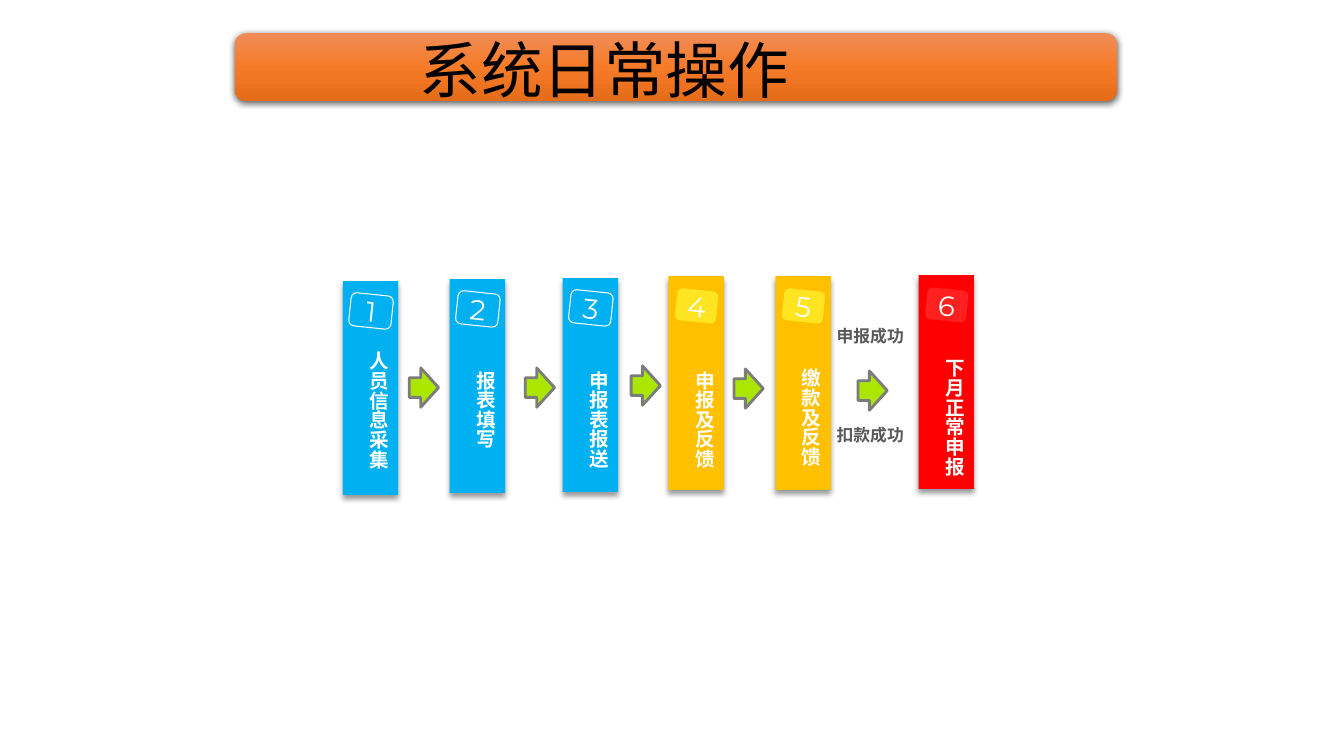
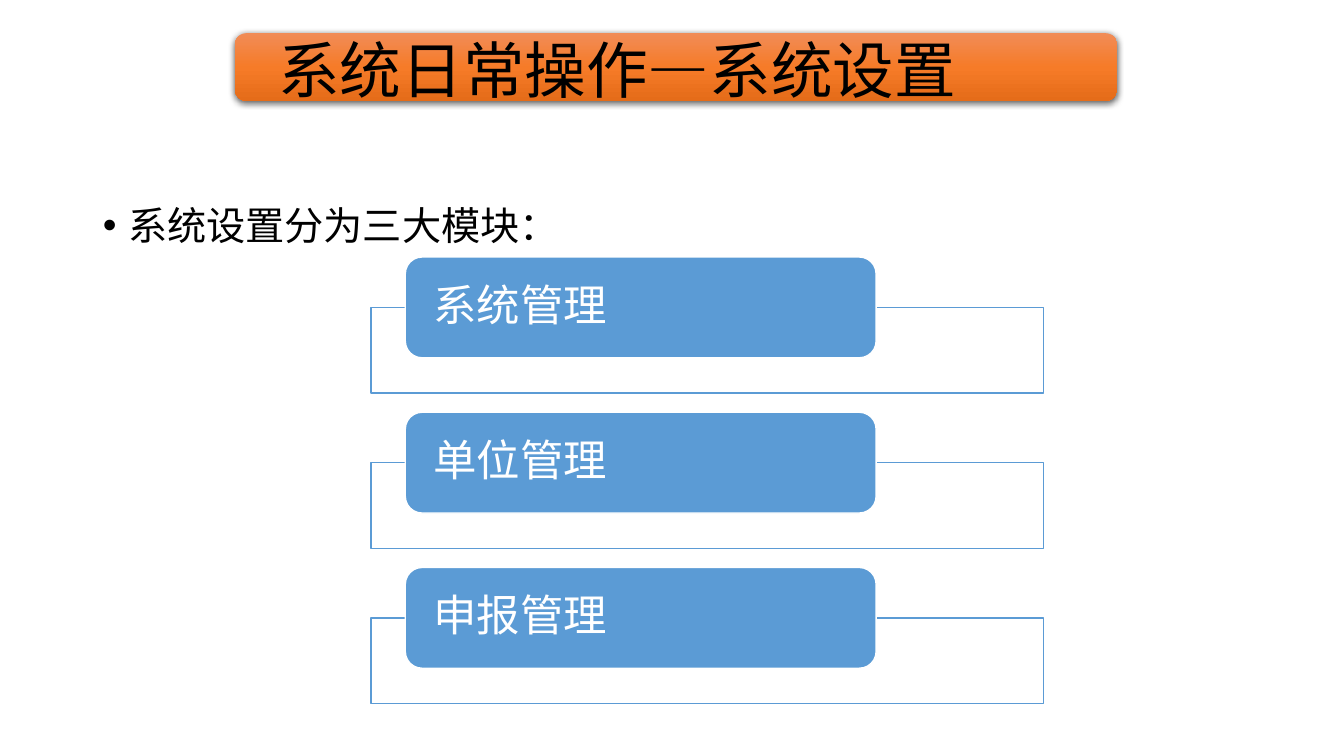
import copy

import pptx
import pptx.dml.color
import pptx.enum.shapes
import pptx.enum.text
import pptx.oxml
import pptx.oxml.ns
import pptx.util

Inches = pptx.util.Inches
Pt = pptx.util.Pt
qn = pptx.oxml.ns.qn
SHAPE = pptx.enum.shapes.MSO_SHAPE
ALIGN = pptx.enum.text.PP_ALIGN
ANCHOR = pptx.enum.text.MSO_ANCHOR
AUTO = pptx.enum.text.MSO_AUTO_SIZE

COLORS = {
    "black": "000000", "white": "FFFFFF", "label": "595959",
    "band_top": "F18C57", "band_mid": "F67B28", "band_end": "E56C19",
    "blue": "00B0F0", "amber": "FFC000", "red": "FF0000",
    "amber_badge": "FFE422", "red_badge": "FF2020",
    "arrow": "AAE600", "arrow_line": "7C7C7C", "card": "5B9BD5",
}
EAST_ASIAN = "Noto Sans CJK SC"
FORMATS = {
    "title": {"name": "Calibri", "size": Pt(44), "bold": False, "color": "black"},
    "body": {"name": "Calibri", "size": Pt(28), "bold": False, "color": "black"},
    "card": {"name": "Calibri", "size": Pt(31), "bold": False, "color": "white"},
    "badge": {"name": "Montserrat", "size": Pt(20), "bold": False, "color": "white"},
    "step": {"name": EAST_ASIAN, "size": Pt(14), "bold": True, "color": "white"},
    "result": {"name": EAST_ASIAN, "size": Pt(12), "bold": True, "color": "label"},
}

# left, top, label top, text, fill, badge fill, badge line
STEPS = [
    (3.40, 2.79, 3.39, "人员信息采集", "blue", None, "white"),
    (4.46, 2.77, 3.58, "报表填写", "blue", None, "white"),
    (5.58, 2.76, 3.58, "申报表报送", "blue", None, "white"),
    (6.63, 2.74, 3.58, "申报及反馈", "amber", "amber_badge", "amber"),
    (7.69, 2.74, 3.56, "缴款及反馈", "amber", "amber_badge", "amber"),
    (9.11, 2.73, 3.46, "下月正常申报", "red", "red_badge", "red"),
]
ARROWS = [(4.06, 3.65), (5.21, 3.65), (6.26, 3.63), (7.28, 3.66), (8.51, 3.68)]
RESULTS = [("申报成功", 3.18), ("扣款成功", 4.16)]
MODULES = ["系统管理", "单位管理", "申报管理"]


def rgb(color):
    return pptx.dml.color.RGBColor.from_string(COLORS[color])


def place(item, box):
    for side, length in zip(("left", "top", "width", "height"), box):
        setattr(item, side, Inches(length))


def write(frame, text, style, align=ALIGN.LEFT, spacing=None):
    para = frame.paragraphs[0]
    para.alignment = align
    para.line_spacing = spacing
    span = para.add_run()
    span.text = text
    for key, value in FORMATS[style].items():
        if key == "color":
            span.font.color.rgb = rgb(value)
        else:
            setattr(span.font, key, value)
    latin = span._r.rPr.find(qn("a:latin"))
    east = copy.deepcopy(latin)
    east.tag = qn("a:ea")
    east.set("typeface", EAST_ASIAN)
    latin.addnext(east)
    return para


def add_box(shapes, kind, box, fill=None, line=None, width=1):
    shape = shapes.add_shape(kind, *map(Inches, box))
    shape.shadow.inherit = False
    if fill:
        shape.fill.solid()
        shape.fill.fore_color.rgb = rgb(fill)
    else:
        shape.fill.background()
    if line:
        shape.line.color.rgb = rgb(line)
        shape.line.width = Pt(width)
    else:
        shape.line.fill.background()
    return shape


def add_shadow(shape, alpha, blur, distance):
    effects = shape._element.spPr.find(qn("a:effectLst"))
    effects.append(pptx.oxml.parse_xml(
        f'<a:outerShdw {pptx.oxml.ns.nsdecls("a")} blurRad="{Pt(blur)}" '
        f'dist="{Pt(distance)}" dir="5400000" algn="t" rotWithShape="0">'
        f'<a:srgbClr val="{COLORS["black"]}"><a:alpha val="{alpha * 1000}"/>'
        '</a:srgbClr></a:outerShdw>'))


def add_label(shapes, box, text, style, align=ALIGN.LEFT, vertical=False):
    label = shapes.add_textbox(*map(Inches, box))
    frame = label.text_frame
    frame.word_wrap = False
    frame.auto_size = AUTO.SHAPE_TO_FIT_TEXT
    if vertical:
        frame._txBody.bodyPr.set("vert", "eaVert")
    write(frame, text, style, align)


def add_title(page, text, left):
    """Place the title over the orange band, starting at left."""
    x, y, width, height = 2.33, 0.33, 8.75, 0.67
    band = add_box(page.shapes, SHAPE.ROUNDED_RECTANGLE, (x, y, width, height))
    band.fill.gradient()
    band.fill.gradient_angle = 270
    first = band._element.spPr.find(".//" + qn("a:gs"))
    first.addnext(copy.deepcopy(first))
    stops = zip(band.fill.gradient_stops, ("band_top", "band_mid", "band_end"))
    for index, (stop, color) in enumerate(stops):
        stop.position = index / 2
        stop.color.rgb = rgb(color)
    add_shadow(band, 63, 4.5, 1.5)
    page.shapes._spTree.insert(2, band._element)

    title = page.shapes.title
    place(title, (left, 0, x + width - left, 1.45))
    title.text_frame.vertical_anchor = ANCHOR.MIDDLE
    title.text_frame.auto_size = AUTO.NONE
    write(title.text_frame, text, "title", spacing=0.9)


def add_step(page, number, left, top, label_top, text, fill, badge_fill, badge_line):
    shapes = page.shapes.add_group_shape().shapes
    column = add_box(shapes, SHAPE.RECTANGLE, (left, top, 0.55, 2.12), fill)
    add_shadow(column, 40, 4, 3)
    badge = add_box(shapes, SHAPE.ROUNDED_RECTANGLE,
                    (left + 0.07, top + 0.13, 0.42, 0.33), badge_fill, badge_line, 0.75)
    badge.rotation = 6
    frame = badge.text_frame
    frame.word_wrap = False
    frame.vertical_anchor = ANCHOR.MIDDLE
    for side in ("left", "top", "right", "bottom"):
        setattr(frame, f"margin_{side}", 0)
    write(frame, str(number), "badge", ALIGN.CENTER)
    add_label(shapes, (left + 0.08, label_top, 0.44, 0.12 + 0.19 * len(text)),
              text, "step", ALIGN.CENTER, vertical=True)


def add_arrow(page, left, top):
    arrow = add_box(page.shapes, SHAPE.RIGHT_ARROW, (left, top, 0.29, 0.39),
                    "arrow", "arrow_line", 2)
    arrow.adjustments[0] = 0.5
    arrow.adjustments[1] = 0.61


def add_bullet(page, text, box):
    body = page.placeholders[1]
    place(body, box)
    frame = body.text_frame
    frame.auto_size = AUTO.NONE
    frame.vertical_anchor = ANCHOR.TOP
    props = frame.paragraphs[0]._p.get_or_add_pPr()
    props.set("marL", str(Inches(0.25)))
    props.set("indent", str(-Inches(0.25)))
    for tag, key, value in (("a:buFont", "typeface", "Arial"), ("a:buChar", "char", "•")):
        props.append(props.makeelement(qn(tag), {key: value}))
    para = write(frame, text, "body", spacing=0.9)
    para.space_before = Pt(0)


def add_module(page, text, left, top):
    """Draw a filled heading card over an outlined panel."""
    shapes = page.shapes.add_group_shape().shapes
    add_box(shapes, SHAPE.RECTANGLE, (left, top + 0.5, 6.67, 0.85), "white", "card")
    card = add_box(shapes, SHAPE.ROUNDED_RECTANGLE, (left + 0.34, top, 4.67, 1),
                   "card", "white")
    frame = card.text_frame
    frame.word_wrap = True
    frame.vertical_anchor = ANCHOR.MIDDLE
    frame.margin_left = frame.margin_right = Inches(0.23)
    frame.margin_top = frame.margin_bottom = 0
    write(frame, text, "card", spacing=0.9)


def build_process(deck):
    page = deck.slides.add_slide(deck.slide_layouts[5])
    add_title(page, "系统日常操作", 4.06)
    for number, step in enumerate(STEPS, 1):
        add_step(page, number, *step)
    for left, top in ARROWS:
        add_arrow(page, left, top)
    for text, top in RESULTS:
        add_label(page.shapes, (8.2, top, 0.87, 0.3), text, "result")


def build_modules(deck):
    page = deck.slides.add_slide(deck.slide_layouts[1])
    add_title(page, "系统日常操作—系统设置", 2.66)
    add_bullet(page, "系统设置分为三大模块：", (0.92, 2, 11.5, 0.6))
    for index, text in enumerate(MODULES):
        add_module(page, text, 3.68, 2.55 + 1.54 * index)


def main():
    deck = pptx.Presentation()
    deck.slide_width = Inches(13.33)
    deck.slide_height = Inches(7.5)
    build_process(deck)
    build_modules(deck)
    deck.save("out.pptx")


if __name__ == "__main__":
    main()
